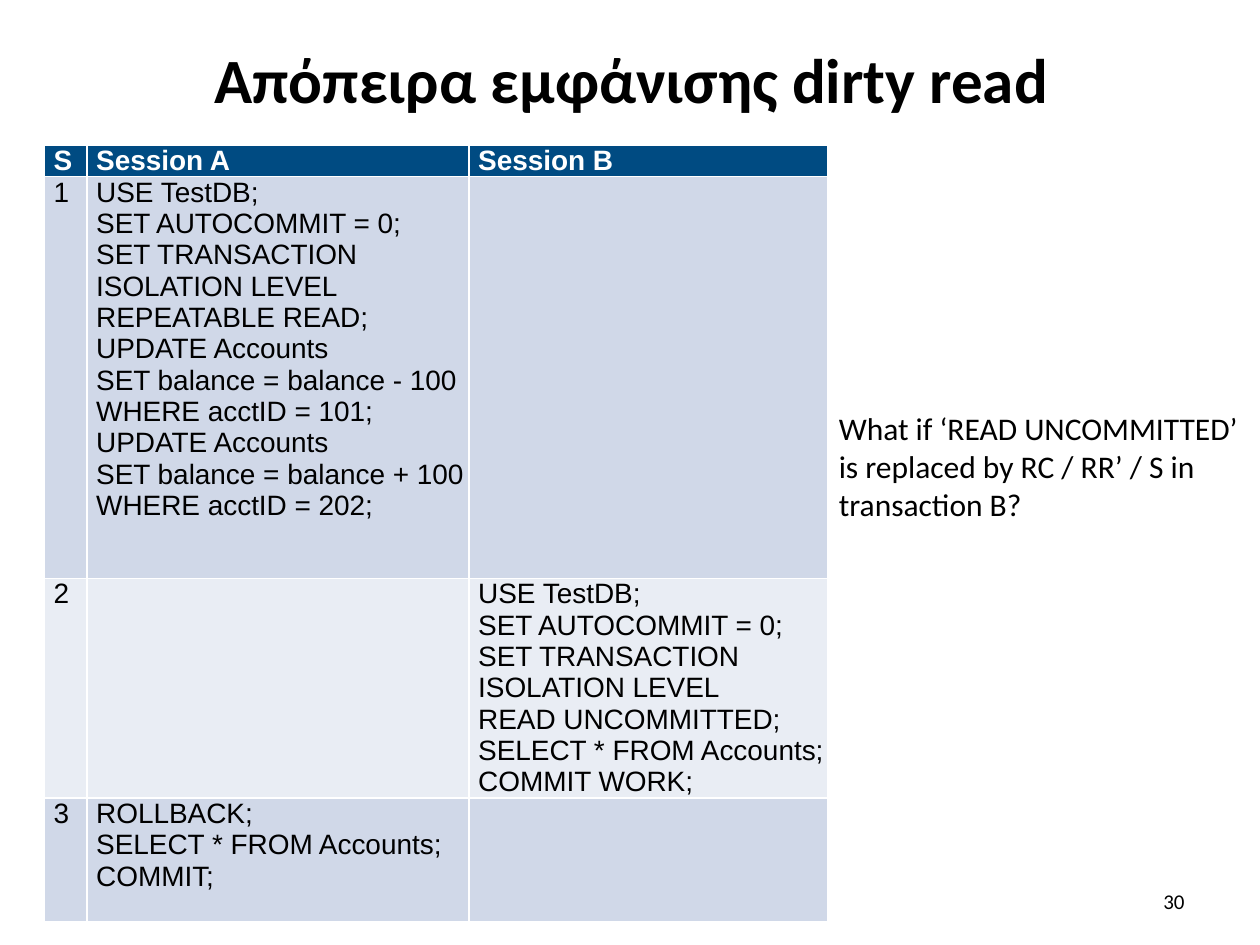
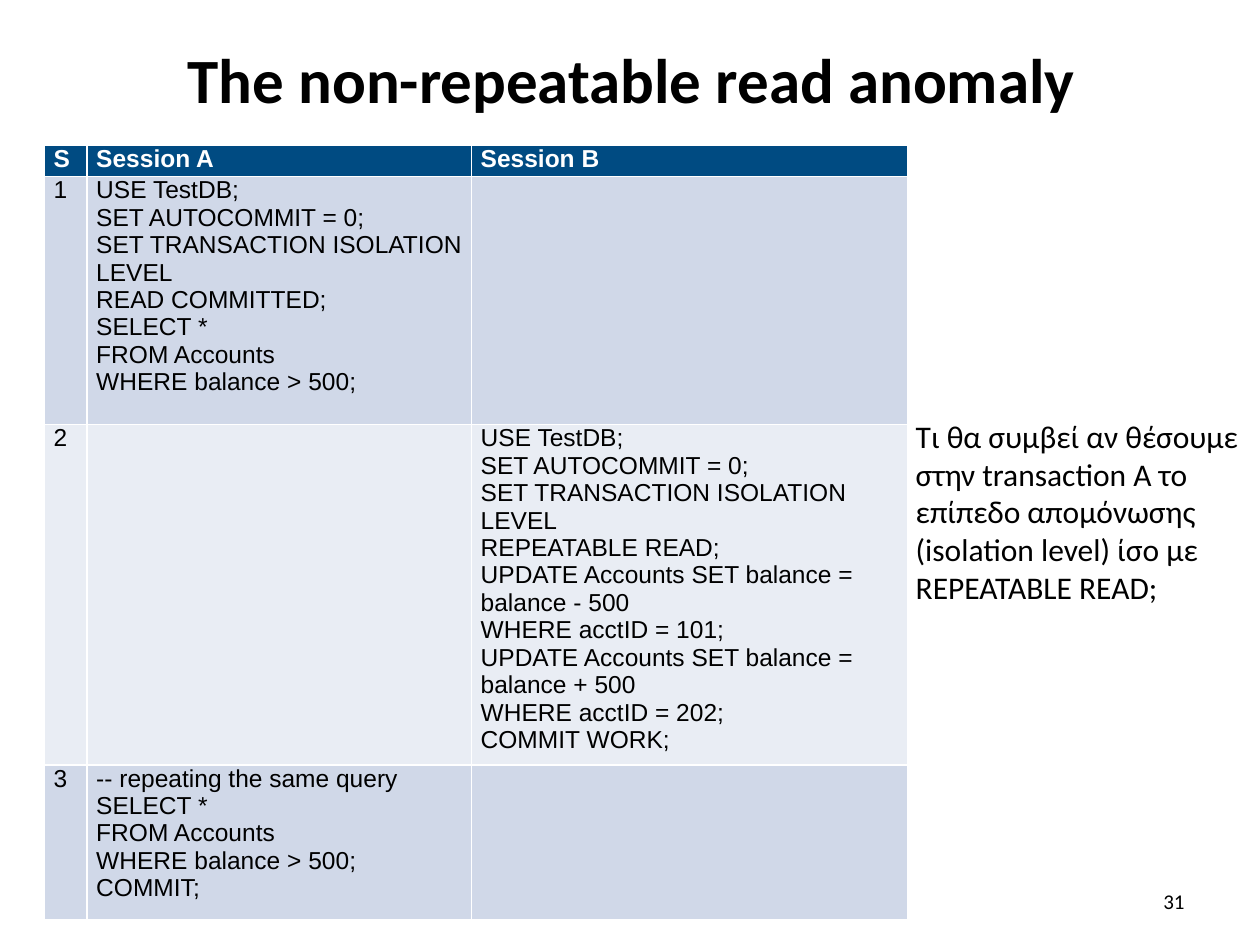
from pptx import Presentation
from pptx.dml.color import RGBColor
from pptx.enum.text import MSO_ANCHOR, PP_ALIGN
from pptx.util import Cm, Pt

LEFT, MID, RIGHT = PP_ALIGN.LEFT, PP_ALIGN.CENTER, PP_ALIGN.RIGHT
TOP, CENTRE = MSO_ANCHOR.TOP, MSO_ANCHOR.MIDDLE

# Shared colours and text formats
BLACK = RGBColor(0x00, 0x00, 0x00)
WHITE = RGBColor(0xFF, 0xFF, 0xFF)
NAVY = RGBColor(0x00, 0x4B, 0x82)
BANDS = [RGBColor(0xD0, 0xD8, 0xE8), RGBColor(0xE9, 0xED, 0xF4)]

TITLE = {"name": "Calibri", "size": Pt(36), "bold": True}
NOTE = {"name": "Calibri", "size": Pt(18), "bold": False}
PAGE = {"name": "Calibri", "size": Pt(12), "bold": False}

HEADS = ["S", "Session A", "Session B"]
PAD = {"margin_left": Cm(0.19), "margin_right": 0,
       "margin_top": 0, "margin_bottom": 0}
PITCH = 1.12  # line pitch of table text, in font sizes

# Statements of each step as (session column, lines)
START = ["USE TestDB;", "SET AUTOCOMMIT = 0;", "SET TRANSACTION ISOLATION LEVEL"]
QUERY = ["SELECT *", "FROM Accounts", "WHERE balance > 500;"]

DIRTY = [
    (1, START + [
        "REPEATABLE READ;",
        "UPDATE Accounts", "SET balance = balance - 100", "WHERE acctID = 101;",
        "UPDATE Accounts", "SET balance = balance + 100", "WHERE acctID = 202;"]),
    (2, START + ["READ UNCOMMITTED;", "SELECT * FROM Accounts;", "COMMIT WORK;"]),
    (1, ["ROLLBACK;", "SELECT * FROM Accounts;", "COMMIT;"]),
]
REPEAT = [
    (1, START + ["READ COMMITTED;"] + QUERY),
    (2, START + [
        "REPEATABLE READ;",
        "UPDATE Accounts SET balance = balance - 500", "WHERE acctID = 101;",
        "UPDATE Accounts SET balance = balance + 500", "WHERE acctID = 202;",
        "COMMIT WORK;"]),
    (1, ["-- repeating the same query"] + QUERY + ["COMMIT;"]),
]


def write(frame, lines, style, color=BLACK, align=LEFT, pitch=None):
    """Fill a text frame with one paragraph per line."""
    for i, line in enumerate(lines):
        para = frame.add_paragraph() if i else frame.paragraphs[0]
        para.alignment = align
        para.line_spacing = pitch
        run = para.add_run()
        run.text = line
        for key, value in style.items():
            setattr(run.font, key, value)
        run.font.color.rgb = color


def add_text(slide, box, text, style, align=LEFT, anchor=TOP):
    shape = slide.shapes.add_textbox(*map(Cm, box))
    frame = shape.text_frame
    frame.word_wrap = True
    frame.vertical_anchor = anchor
    write(frame, [text], style, align=align)


def add_steps(slide, steps, size, widths, heights):
    """Draw the table of steps that the two sessions take in turn."""
    table = slide.shapes.add_table(
        len(heights), len(widths), Cm(0.89), Cm(2.92),
        Cm(sum(widths)), Cm(sum(heights))).table
    for col, width in zip(table.columns, widths):
        col.width = Cm(width)
    for row, height in zip(table.rows, heights):
        row.height = Cm(height)

    # Header first, then one row for each step
    grid = [[[head] for head in HEADS]]
    for step, (place, lines) in enumerate(steps, 1):
        row = [[str(step)], [], []]
        row[place] = lines
        grid.append(row)

    for r, row in enumerate(grid):
        head = r == 0
        style = {"name": "Arial", "size": Pt(size), "bold": head}
        for c, lines in enumerate(row):
            cell = table.cell(r, c)
            for key, value in PAD.items():
                setattr(cell, key, value)
            cell.fill.solid()
            cell.fill.fore_color.rgb = NAVY if head else BANDS[(r - 1) % 2]
            write(cell.text_frame, lines, style, WHITE if head else BLACK,
                  pitch=Pt(size * PITCH))


def add_slide(prs, title, page):
    """Start a slide with its title and page number."""
    slide = prs.slides.add_slide(prs.slide_layouts[6])
    add_text(slide, (1.3, 0.33, 22.86, 2.51), title, TITLE, MID, CENTRE)
    add_text(slide, (18.21, 17.65, 5.92, 1.02), str(page), PAGE, RIGHT, CENTRE)
    return slide


def main():
    prs = Presentation()
    prs.slide_width, prs.slide_height = Cm(25.4), Cm(19.05)

    # Dirty read
    slide = add_slide(prs, "Απόπειρα εμφάνισης dirty read", 30)
    add_steps(slide, DIRTY, 16, [0.86, 7.7, 7.24], [0.64, 8.1, 4.39, 2.49])
    add_text(slide, (16.66, 8.13, 8.79, 2.57),
             "What if ‘READ UNCOMMITTED’ is replaced by RC / RR’ / S in "
             "transaction B?", NOTE)

    # Non-repeatable read
    slide = add_slide(prs, "The non-repeatable read anomaly", 31)
    add_steps(slide, REPEAT, 14, [0.86, 7.75, 8.79], [0.64, 5, 6.86, 3.12])
    add_text(slide, (18.21, 8.28, 7.34, 4.11),
             "Τι θα συμβεί αν θέσουμε στην transaction A το επίπεδο απομόνωσης "
             "(isolation level) ίσο με REPEATABLE READ;", NOTE)

    prs.save("out.pptx")


if __name__ == "__main__":
    main()
